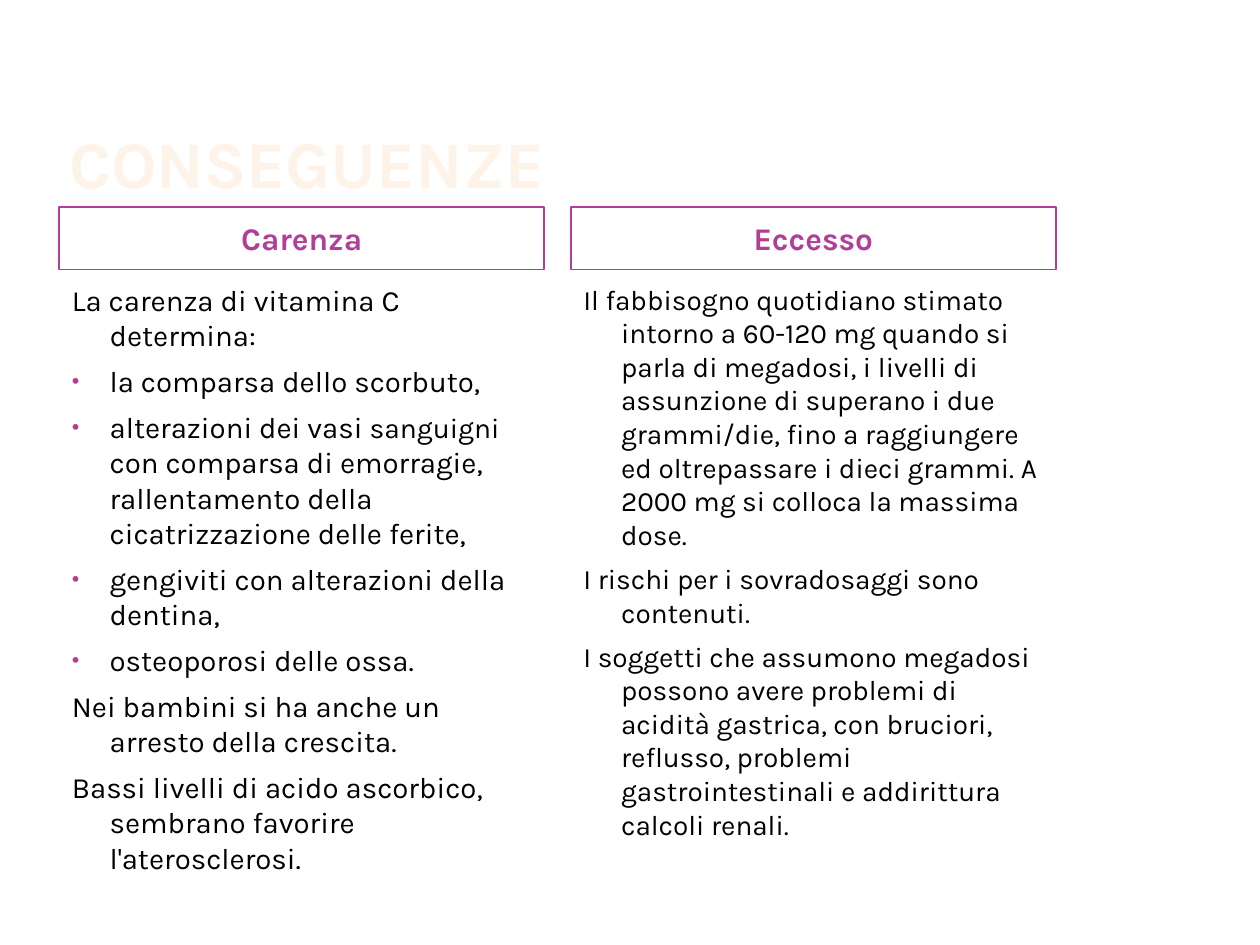
from lxml import etree
from pptx import Presentation
from pptx.dml.color import RGBColor
from pptx.enum.text import MSO_ANCHOR, MSO_AUTO_SIZE, PP_ALIGN
from pptx.oxml.ns import qn
from pptx.util import Emu, Inches, Pt

LEFT, CENTER = PP_ALIGN.LEFT, PP_ALIGN.CENTER
TOP, MIDDLE, BOTTOM = MSO_ANCHOR.TOP, MSO_ANCHOR.MIDDLE, MSO_ANCHOR.BOTTOM
NO_FIT = MSO_AUTO_SIZE.NONE

FONT = "Karla"
ACCENT = "B13F9A"
TEXT = "000000"
TITLE_OUTLINE = "5E1A50"
TITLE_STOPS = [(0, "FEF7F1"), (10, "FEF3E8"), (49, "FBCF9C"), (50, "F9B94C"), (100, "FEF3E8")]

COLUMN_LEFT, COLUMN_STEP, COLUMN_WIDTH = 0.47, 4.06, 3.85
HEADING_TOP, HEADING_HEIGHT = 1.64, 0.5
BODY_TOP, BODY_HEIGHT = 2.19, 4.5
INDENT = 0.3

COLUMNS = [
    ("Carenza", 16.8, [
        (False, [("La carenza di vitamina C determina:", None)]),
        (True, [("la comparsa dello scorbuto,", None)]),
        (True, [
            ("alterazioni dei vasi ", None),
            ("sanguigni", 16.1),
            (" con comparsa di emorragie, rallentamento della cicatrizzazione delle ferite,", None),
        ]),
        (True, [("gengiviti con alterazioni della dentina,", None)]),
        (True, [("osteoporosi delle ossa.", None)]),
        (False, [("Nei bambini si ha anche un arresto della crescita.", None)]),
        (False, [("Bassi livelli di acido ascorbico, sembrano favorire l'aterosclerosi.", None)]),
    ]),
    ("Eccesso", 16, [
        (False, [("Il fabbisogno quotidiano stimato intorno a 60-120 mg quando si parla di megadosi, "
                  "i livelli di assunzione di superano i due grammi/die, fino a raggiungere ed "
                  "oltrepassare i dieci grammi. A 2000 mg si colloca la massima dose.", None)]),
        (False, [("I rischi per i sovradosaggi sono contenuti.", None)]),
        (False, [("I soggetti che assumono megadosi possono avere problemi di acidità gastrica, "
                  "con bruciori, reflusso, problemi gastrointestinali e addirittura calcoli renali.", None)]),
    ]),
]


def rgb(value):
    return RGBColor.from_string(value)


def apply(target, values):
    for name, value in values.items():
        setattr(target, name, value)


def child(parent, tag, **attributes):
    return etree.SubElement(parent, qn(tag), {key: str(value) for key, value in attributes.items()})


def place(holder, left, top, width, height, anchor):
    apply(holder, {"left": Inches(left), "top": Inches(top),
                   "width": Inches(width), "height": Inches(height)})
    apply(holder.text_frame, {"word_wrap": True, "auto_size": NO_FIT, "vertical_anchor": anchor})


def add_run(paragraph, text, size, bold, color=None):
    run = paragraph.add_run()
    run.text = text
    apply(run.font, {"name": FONT, "size": Pt(size), "bold": bold})
    if color:
        run.font.color.rgb = rgb(color)
    return run


def paint_title(run):
    properties = run.font._element
    outline = etree.Element(qn("a:ln"), w=str(Pt(0.04)))
    child(child(outline, "a:solidFill"), "a:srgbClr", val=TITLE_OUTLINE)
    gradient = etree.Element(qn("a:gradFill"))
    stops = child(gradient, "a:gsLst")
    for position, color in TITLE_STOPS:
        child(child(stops, "a:gs", pos=position * 1000), "a:srgbClr", val=color)
    child(gradient, "a:lin", ang=90 * 60000)
    properties.insert(0, outline)
    properties.insert(1, gradient)


def fill_title(holder, text):
    place(holder, 0.5, 0.35, 7.92, 1.25, BOTTOM)
    apply(holder.text_frame, {"margin_left": Inches(0.05), "margin_right": Inches(0.05),
                              "margin_top": Emu(0), "margin_bottom": Emu(0)})
    paragraph = holder.text_frame.paragraphs[0]
    paragraph.alignment = LEFT
    paint_title(add_run(paragraph, text, 38, True))


def fill_heading(holder, left, text):
    place(holder, left, HEADING_TOP, COLUMN_WIDTH, HEADING_HEIGHT, MIDDLE)
    holder.line.color.rgb = rgb(ACCENT)
    holder.line.width = Pt(1)
    paragraph = holder.text_frame.paragraphs[0]
    apply(paragraph, {"alignment": CENTER, "space_before": Pt(0)})
    add_run(paragraph, text, 18, True, ACCENT)


def set_bullet(paragraph, bulleted):
    properties = paragraph._p.get_or_add_pPr()
    properties.set("marL", str(Inches(INDENT)))
    properties.set("indent", str(-Inches(INDENT)))
    if bulleted:
        child(child(properties, "a:buClr"), "a:srgbClr", val=ACCENT)
        child(properties, "a:buSzPct", val=73000)
        child(properties, "a:buChar", char="•")
    else:
        child(properties, "a:buNone")


def fill_body(holder, left, size, entries):
    place(holder, left, BODY_TOP, COLUMN_WIDTH, BODY_HEIGHT, TOP)
    frame = holder.text_frame
    for index, (bulleted, runs) in enumerate(entries):
        paragraph = frame.add_paragraph() if index else frame.paragraphs[0]
        set_bullet(paragraph, bulleted)
        apply(paragraph, {"alignment": LEFT, "space_before": Pt(6 if index else 0)})
        for text, own_size in runs:
            add_run(paragraph, text, own_size or size, False, TEXT)


def main():
    deck = Presentation()
    apply(deck, {"slide_width": Inches(10), "slide_height": Inches(7.5)})
    slide = deck.slides.add_slide(deck.slide_layouts.get_by_name("Comparison"))
    title, *holders = slide.placeholders
    fill_title(title, "CONSEGUENZE")
    for column, (heading, size, entries) in enumerate(COLUMNS):
        left = COLUMN_LEFT + column * COLUMN_STEP
        heading_holder, body_holder = holders[2 * column:2 * column + 2]
        fill_heading(heading_holder, left, heading)
        fill_body(body_holder, left, size, entries)
    deck.save("out.pptx")


if __name__ == "__main__":
    main()
